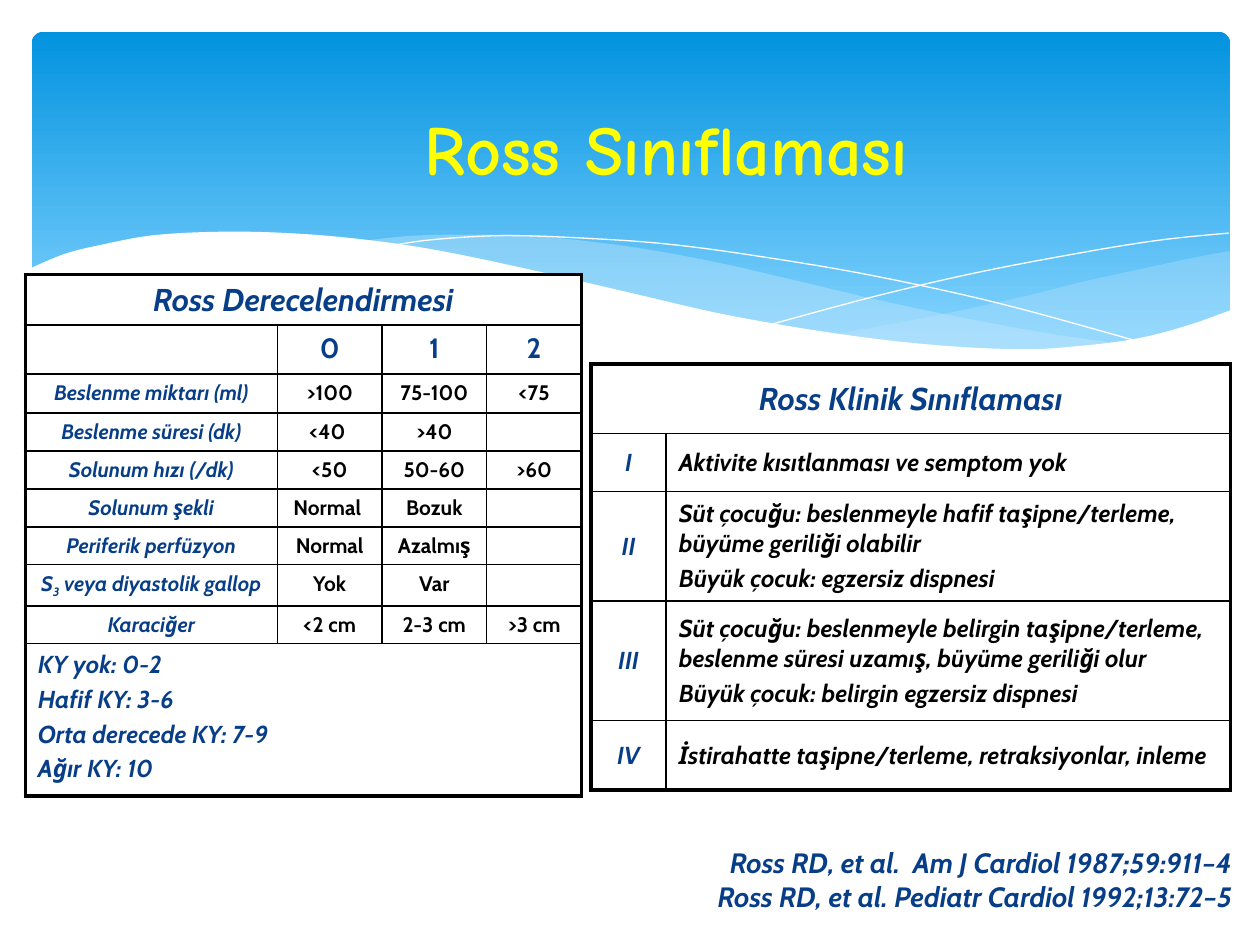
from lxml.etree import SubElement as Sub
from pptx import Presentation
from pptx.dml.color import RGBColor as Rgb
from pptx.enum.shapes import MSO_SHAPE as Form
from pptx.enum.text import MSO_ANCHOR as Anchor, PP_ALIGN as Align
from pptx.oxml.ns import qn
from pptx.util import Cm, Pt

HUES = {"navy": "073E87", "ink": "000000", "white": "FFFFFF", "gold": "FFFF00",
        "deep": "0293E0", "sky": "83D3FE", "mist": "C6E7FC"}
VEIL = [(24.16, 4.42), (23.44, 4.55), (22.38, 4.78), (21.23, 5.03), (19.81, 5.38),
        (17.88, 5.79), (16.15, 6.1)]
VEIL_LOW = [(16.15, 6.1), (17.6, 6.27), (18.9, 6.4), (20.29, 6.4), (21.51, 6.32),
            (22.76, 6.1), (23.47, 5.89), (24.16, 5.64)]
BAND = [(22.05, 6.3), (20.62, 6.1), (19.05, 5.82), (17.3, 5.46), (15.34, 5),
        (13.82, 4.65), (12.42, 4.39), (11.18, 4.22), (10.03, 4.11), (9.02, 4.09),
        (7.7, 4.11), (6.63, 4.22)]
BAND_LOW = [(6.63, 4.22), (8.05, 4.42), (9.63, 4.72), (10.77, 5), (12.83, 5.46),
            (14.63, 5.84), (16.26, 6.12), (17.7, 6.32), (19.3, 6.43), (20.65, 6.43),
            (22.05, 6.3)]
FALL = [(7.21, 4.32), (8.1, 4.19), (9.55, 4.11), (11.28, 4.17), (12.9, 4.29),
        (14.81, 4.55), (17.02, 4.93), (19.56, 5.49), (22.4, 6.27)]
RISE = [(14.94, 5.89), (17.02, 5.33), (19.08, 4.85), (21.36, 4.42), (22.83, 4.19),
        (24.13, 4.06)]
FOAM = [(24.18, 5.61), (23.24, 5.94), (22.2, 6.2), (20.96, 6.35), (19.91, 6.4),
        (18.26, 6.32), (16.33, 6.1), (14.07, 5.72), (12.14, 5.28), (9.98, 4.78),
        (7.98, 4.37), (6.25, 4.14), (4.72, 4.04), (3.45, 4.04), (2.39, 4.11),
        (1.52, 4.27), (0.69, 4.47), (-0.05, 4.78)]
SCORES = [
    ["Beslenme miktarı (ml)", ">100", "75-100", "<75"],
    ["Beslenme süresi (dk)", "<40 ", ">40", ""],
    ["Solunum hızı (/dk)", "<50", "50-60", ">60"],
    ["Solunum şekli", "Normal ", "Bozuk", ""],
    ["Periferik perfüzyon", "Normal", "Azalmış", ""],
    ["S_3_ veya diyastolik gallop", "Yok", "Var", ""],
    ["Karaciğer", "<2 cm", "2-3 cm", ">3 cm"],
]
GRADES = ["KY yok: 0-2", "Hafif KY: 3-6", "Orta derecede KY: 7-9", "Ağır KY: 10"]
STAGES = [
    ("I", ["Aktivite kısıtlanması ve semptom yok"]),
    ("II", ["Süt çocuğu: beslenmeyle hafif taşipne/terleme, büyüme geriliği olabilir",
            "Büyük çocuk: egzersiz dispnesi"]),
    ("III", ["Süt çocuğu: beslenmeyle belirgin taşipne/terleme, "
             "beslenme süresi uzamış, büyüme geriliği olur",
             "Büyük çocuk: belirgin egzersiz dispnesi"]),
    ("IV", ["İstirahatte taşipne/terleme, retraksiyonlar, inleme"]),
]


def hue(name):
    """Return the colour of that name."""
    return Rgb.from_string(HUES[name])


def smooth(knots, steps=6):
    """Return points on a Catmull-Rom curve through the knots."""
    ends = [knots[0], *knots, knots[-1]]
    points = [knots[0]]
    for a, b, c, d in zip(ends, ends[1:], ends[2:], ends[3:]):
        for t in (n / steps for n in range(1, steps + 1)):
            points.append(tuple(
                (2 * q + (r - p) * t + (2 * p - 5 * q + 4 * r - s) * t ** 2
                 + (3 * q - p - 3 * r + s) * t ** 3) / 2
                for p, q, r, s in zip(a, b, c, d)))
    return points


def write(frame, lines, size, color="navy", slant=True, align=Align.CENTER,
          font="Cabin", gap=0):
    """Write lines run by run, with underscores around a subscript."""
    frame.word_wrap = True
    for i, line in enumerate(lines):
        para = frame.paragraphs[0] if i == 0 else frame.add_paragraph()
        para.alignment = align
        if i:
            para.space_before = Pt(gap)
        for j, text in enumerate(line.split("_") if line else []):
            run = para.add_run()
            run.text = text
            face = run.font
            face.name, face.size = font, Pt(size)
            face.bold, face.italic = True, slant
            face.color.rgb = hue(color)
            if j % 2:
                run._r.get_or_add_rPr().set("baseline", "-25000")
        if not line:
            Sub(para._p, qn("a:endParaRPr"), sz=str(size * 100))


def label(slide, box, lines, size, anchor=Anchor.TOP, **style):
    """Place a text box."""
    frame = slide.shapes.add_textbox(*map(Cm, box)).text_frame
    frame.vertical_anchor = anchor
    write(frame, lines, size, **style)


def wave(slide, box, points, fill=None, alpha=100):
    """Draw a filled wave, or a white hairline when there is no fill."""
    spots = [(Cm(box[0] + x), Cm(box[1] + y)) for x, y in points]
    pen = slide.shapes.build_freeform(*spots[0], scale=1.0)
    pen.add_line_segments(spots[1:], close=bool(fill))
    shape = pen.convert_to_shape()
    shape.shadow.inherit = False
    if fill:
        shape.fill.solid()
        shape.fill.fore_color.rgb = hue(fill)
        shape.line.fill.background()
        tint = shape._element.spPr.find(".//" + qn("a:srgbClr"))
        Sub(tint, qn("a:alpha"), val=str(alpha * 1000))
    else:
        shape.fill.background()
        shape.line.color.rgb = hue("white")
        shape.line.width = Pt(0)


def banner(slide, box):
    """Draw the blue header with its waves."""
    panel = slide.shapes.add_shape(Form.ROUNDED_RECTANGLE, *map(Cm, box))
    panel.adjustments[0] = 0.034
    panel.shadow.inherit = False
    panel.line.fill.background()
    panel.fill.gradient()
    panel.fill.gradient_angle = 270
    for stop, name, at in zip(panel.fill.gradient_stops, ("deep", "sky"), (0, 0.9)):
        stop.color.rgb, stop.position = hue(name), at
    wave(slide, box, smooth(VEIL) + smooth(VEIL_LOW), "mist", 29)
    wave(slide, box, smooth(BAND) + smooth(BAND_LOW), "mist", 40)
    wave(slide, box, smooth(FALL))
    wave(slide, box, smooth(RISE))
    wave(slide, box, smooth(FOAM) + [(-0.05, 7.72), (24.18, 7.72)], "white")


def grid(slide, spot, cols, rows, wide):
    """Add a table with a thick frame, thin rules and merged wide rows."""
    size = sum(cols), sum(rows)
    table = slide.shapes.add_table(len(rows), len(cols), *map(Cm, (*spot, *size))).table
    table.first_row = table.horz_banding = False
    for col, width in zip(table.columns, cols):
        col.width = Cm(width)
    for row, height in zip(table.rows, rows):
        row.height = Cm(height)
    for r in wide:
        table.cell(r, 0).merge(table.cell(r, len(cols) - 1))
    for r in range(len(rows)):
        for c in range(len(cols)):
            cell = table.cell(r, c)
            if cell.is_spanned:
                continue
            edges = {"L": c == 0, "R": r in wide or c == len(cols) - 1,
                     "T": r == 0, "B": r == len(rows) - 1}
            for side, thick in edges.items():
                rule = Sub(cell._tc.get_or_add_tcPr(), qn("a:ln" + side),
                           w=str(Pt(2.25 if thick else 1)))
                Sub(Sub(rule, qn("a:solidFill")), qn("a:srgbClr"), val=HUES["ink"])
            cell.fill.solid()
            cell.fill.fore_color.rgb = hue("white")
    return table


def scoring(slide, spot):
    """Place the scoring table."""
    rows = [1.02, 0.99, 0.79, *[0.76] * 4, 0.83, 0.76, 3.07]
    table = grid(slide, spot, [5.08, 2.11, 2.11, 1.91], rows, {0, 9})
    write(table.cell(0, 0).text_frame, ["Ross Derecelendirmesi"], 18)
    for c, text in enumerate(["", "0", "1", "2"]):
        write(table.cell(1, c).text_frame, [text], 16, slant=False)
    for r, line in enumerate(SCORES, 2):
        for c, text in enumerate(line):
            write(table.cell(r, c).text_frame, [text], 12, "ink" if c else "navy", c == 0)
    write(table.cell(9, 0).text_frame, GRADES, 14, align=Align.LEFT, gap=2.8)


def staging(slide, spot):
    """Place the clinical class table."""
    table = grid(slide, spot, [1.52, 11.38], [1.4, 1.17, 2.21, 2.41, 1.4], {0})
    for cell in table.iter_cells():
        cell.vertical_anchor = Anchor.MIDDLE
    write(table.cell(0, 0).text_frame, ["Ross Klinik Sınıflaması"], 18)
    for r, (stage, lines) in enumerate(STAGES, 1):
        write(table.cell(r, 0).text_frame, [stage], 14)
        write(table.cell(r, 1).text_frame, lines, 14, "ink", align=Align.LEFT, gap=2.8)


def main():
    """Build and save the slide."""
    deck = Presentation()
    deck.slide_width, deck.slide_height = Cm(25.4), Cm(19.05)
    slide = deck.slides.add_slide(deck.slide_layouts[6])
    banner(slide, (0.64, 0.64, 24.16, 6.86))
    label(slide, (1.47, 1.98, 23.93, 1.98), ["Ross Sınıflaması"], 40, Anchor.MIDDLE,
          color="gold", slant=False, font="Comic Neue")
    scoring(slide, (0.51, 5.53))
    staging(slide, (11.91, 7.34))
    label(slide, (13.28, 16.92, 11.81, 1.63),
          ["Ross RD, et al.  Am J Cardiol 1987;59:911–4",
           "Ross RD, et al. Pediatr Cardiol 1992;13:72–5"], 16, align=Align.RIGHT)
    deck.save("out.pptx")


if __name__ == "__main__":
    main()
